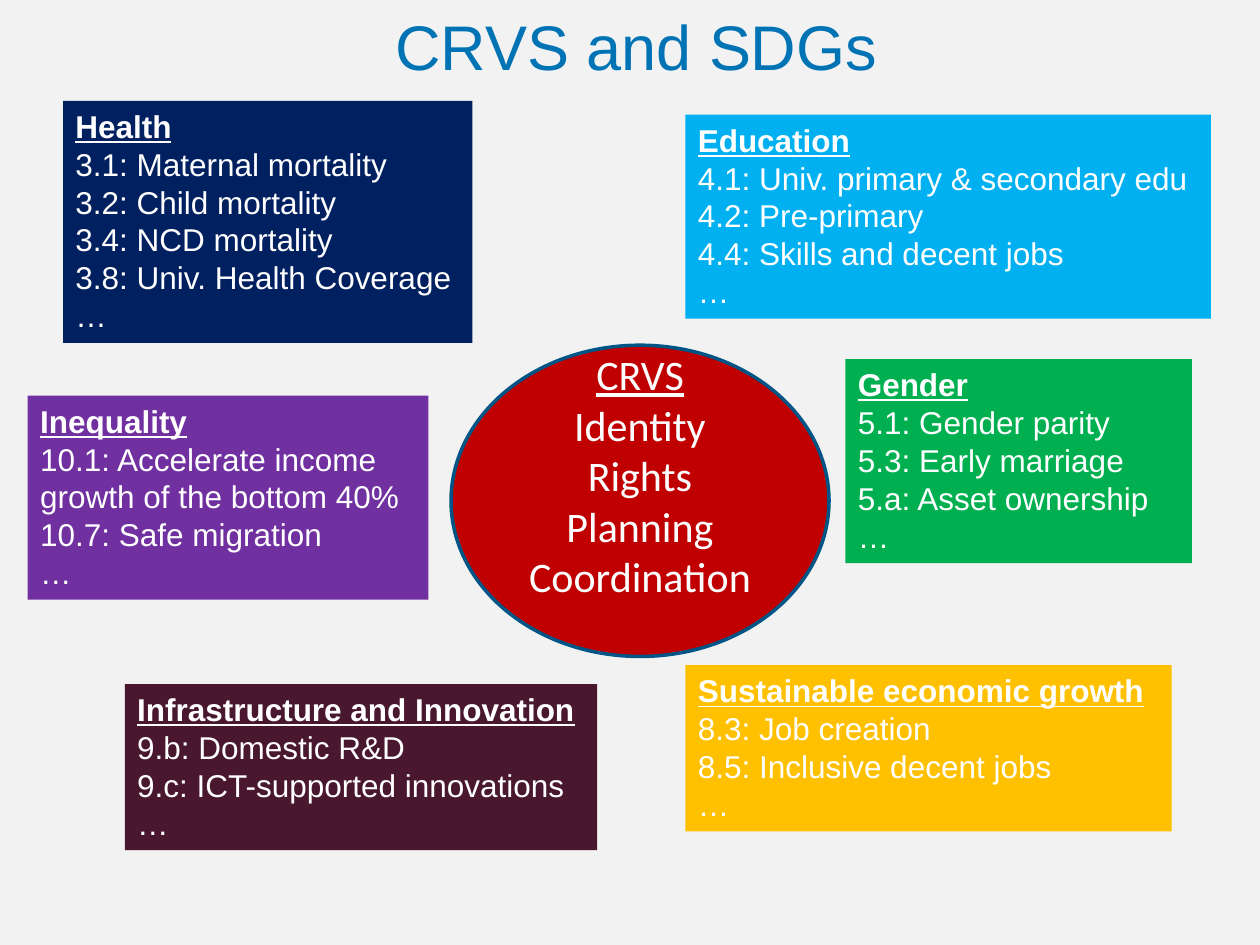
from pptx import Presentation
from pptx.dml.color import RGBColor
from pptx.enum.shapes import MSO_SHAPE
from pptx.enum.text import MSO_ANCHOR, PP_ALIGN
from pptx.util import Inches, Pt

RECT, OVAL = MSO_SHAPE.RECTANGLE, MSO_SHAPE.OVAL
TOP, MIDDLE = MSO_ANCHOR.TOP, MSO_ANCHOR.MIDDLE
LEFT, CENTER = PP_ALIGN.LEFT, PP_ALIGN.CENTER
WHITE = "FFFFFF"

prs = Presentation()
prs.slide_width, prs.slide_height = Inches(10), Inches(7.5)
# Grid of 100 columns by 75 rows
COL, ROW = prs.slide_width / 100, prs.slide_height / 75


def rgb(value):
    return RGBColor.from_string(value)


def write(sp, lines, size, font="Arial", color=WHITE, align=LEFT,
          anchor=TOP, underline=False, bold=False):
    """Fill a shape with lines; underline and bold apply to the first one."""
    tf = sp.text_frame
    tf.word_wrap = True
    tf.vertical_anchor = anchor
    for i, line in enumerate(lines):
        p = tf.paragraphs[0] if i == 0 else tf.add_paragraph()
        p.alignment = align
        r = p.add_run()
        r.text = line
        r.font.name, r.font.size = font, Pt(size)
        r.font.color.rgb = rgb(color)
        r.font.bold = bold and i == 0
        r.font.underline = underline and i == 0
    return tf


s = prs.slides.add_slide(prs.slide_layouts[6])
s.background.fill.solid()
s.background.fill.fore_color.rgb = rgb("F2F2F2")

# Central ellipse
sp = s.shapes.add_shape(OVAL, int(35.8 * COL), int(27.4 * ROW),
                        int(30 * COL), int(24.7 * ROW))
sp.shadow.inherit = False
sp.fill.solid()
sp.fill.fore_color.rgb = rgb("C00000")
sp.line.color.rgb = rgb("005586")
sp.line.width = Pt(2)
tf = write(sp, ["CRVS", "Identity", "Rights", "Planning", "Coordination"], 24,
           font="Calibri", align=CENTER, anchor=MIDDLE, underline=True)
tf.margin_bottom = int(4.6 * ROW)  # lifts the text by half a line

# Goal boxes: column, row, columns wide, fill, heading and targets
goals = [
    (5, 8, 32.5, "002060",
     ["Health", "3.1: Maternal mortality", "3.2: Child mortality",
      "3.4: NCD mortality", "3.8: Univ. Health Coverage"]),
    (54.4, 9.1, 41.7, "00B0F0",
     ["Education", "4.1: Univ. primary & secondary edu",
      "4.2: Pre-primary", "4.4: Skills and decent jobs"]),
    (67.1, 28.5, 27.5, "00B050",
     ["Gender", "5.1: Gender parity", "5.3: Early marriage",
      "5.a: Asset ownership"]),
    (54.4, 52.8, 38.6, "FFC000",
     ["Sustainable economic growth", "8.3: Job creation",
      "8.5: Inclusive decent jobs"]),
    (9.9, 54.3, 37.5, "49172E",
     ["Infrastructure and Innovation", "9.b: Domestic R&D",
      "9.c: ICT-supported innovations"]),
    (2.2, 31.4, 31.8, "7030A0",
     ["Inequality", "10.1: Accelerate income growth of the bottom 40%",
      "10.7: Safe migration"]),
]
for col, row, width, fill, lines in goals:
    # One text line is 3 rows high; long targets wrap onto a second line
    count = len(lines) + 1 + sum(len(line) > 40 for line in lines)
    sp = s.shapes.add_shape(RECT, int(col * COL), int(row * ROW),
                            int(width * COL), int((1.1 + 3.02 * count) * ROW))
    sp.shadow.inherit = False
    sp.fill.solid()
    sp.fill.fore_color.rgb = rgb(fill)
    sp.line.fill.background()
    write(sp, lines + ["…"], 18, underline=True, bold=True)

# Title
sp = s.shapes.add_textbox(int(30.2 * COL), int(1.2 * ROW),
                          int(40.6 * COL), int(4.8 * ROW))
write(sp, ["CRVS and SDGs"], 36, color="0073B5", align=CENTER, anchor=MIDDLE)

prs.save("out.pptx")
